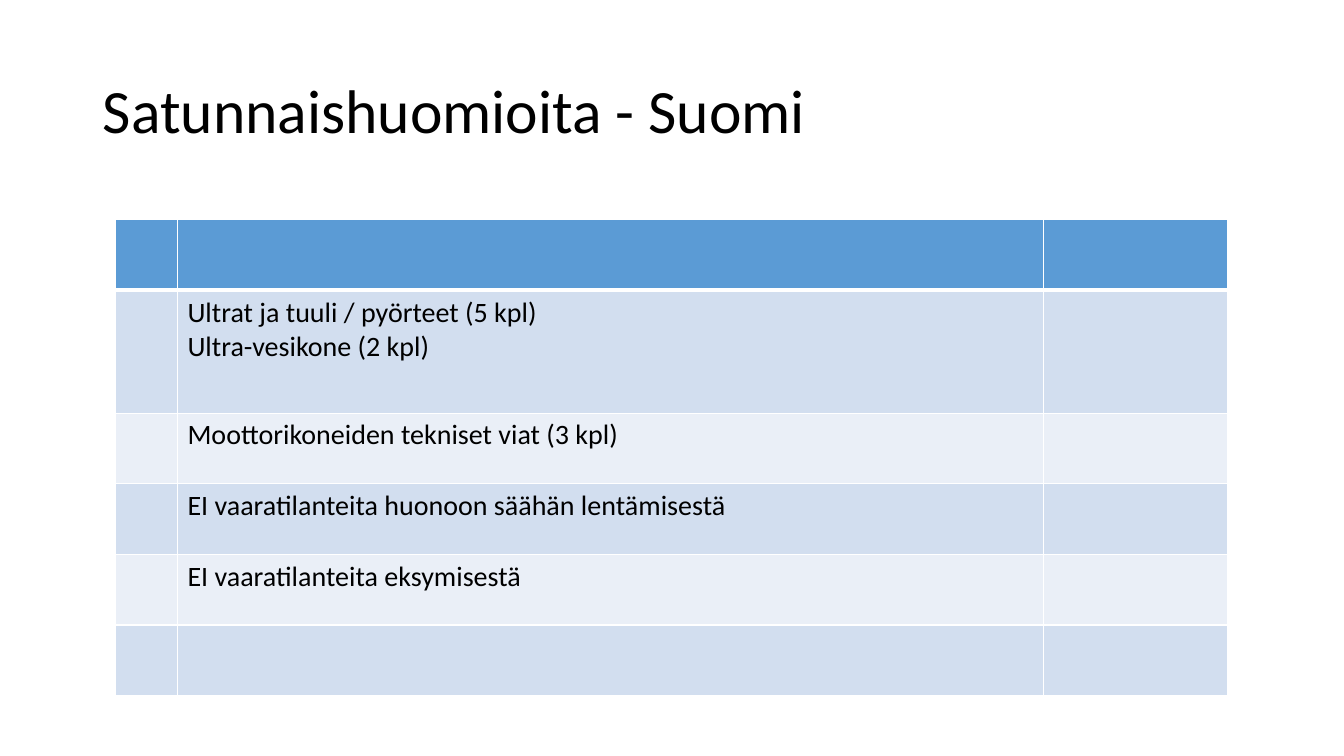
from pptx import Presentation
from pptx.dml.color import RGBColor
from pptx.enum.text import MSO_ANCHOR, MSO_AUTO_SIZE, PP_ALIGN
from pptx.oxml.ns import qn
from pptx.util import Inches, Pt
from lxml import etree

LEFT = PP_ALIGN.LEFT
MIDDLE = MSO_ANCHOR.MIDDLE
NO_FIT = MSO_AUTO_SIZE.NONE
TITLE_ONLY = 5

COLORS = {
    "text": "000000",
    "border": "FFFFFF",
    "header": "5B9BD5",
    "odd": "D2DEEF",
    "even": "EAEFF7",
}
COLUMN_WIDTHS = [0.62, 8.59, 1.83]
ROW_HEIGHTS = [0.7, 1.22, 0.7, 0.7, 0.7, 0.7]
OBSERVATIONS = [
    "",
    "Ultrat ja tuuli / pyörteet (5 kpl)\nUltra-vesikone (2 kpl)",
    "Moottorikoneiden tekniset viat (3 kpl)",
    "EI vaaratilanteita huonoon säähän lentämisestä",
    "EI vaaratilanteita eksymisestä",
    "",
]


class SlideBuilder:
    """Holds the text style and the current slide."""

    def __init__(self, slide, font="Calibri"):
        self.slide = slide
        self.font = font

    def style(self, frame, size):
        for paragraph in frame.paragraphs:
            paragraph.alignment = LEFT
            for run in paragraph.runs:
                run.font.name = self.font
                run.font.size = Pt(size)
                run.font.color.rgb = RGBColor.from_string(COLORS["text"])

    def title(self, text, left, top, width, height):
        heading = self.slide.shapes.title
        heading.left, heading.top = Inches(left), Inches(top)
        heading.width, heading.height = Inches(width), Inches(height)
        frame = heading.text_frame
        frame.text = text
        frame.word_wrap = True
        frame.auto_size = NO_FIT
        frame.vertical_anchor = MIDDLE
        frame.paragraphs[0].line_spacing = 0.9
        self.style(frame, 44)

    def border(self, cell, side, points):
        properties = cell._tc.get_or_add_tcPr()
        line = etree.SubElement(properties, qn(f"a:{side}"), w=str(Pt(points)))
        fill = etree.SubElement(line, qn("a:solidFill"))
        etree.SubElement(fill, qn("a:srgbClr"), val=COLORS["border"])

    def table(self, entries, left, top, widths, heights):
        table = self.slide.shapes.add_table(
            len(heights), len(widths), Inches(left), Inches(top),
            Inches(sum(widths)), Inches(sum(heights))).table
        for column, width in zip(table.columns, widths):
            column.width = Inches(width)
        for index, (row, height) in enumerate(zip(table.rows, heights)):
            row.height = Inches(height)
            band = "header" if index == 0 else "odd" if index % 2 else "even"
            thickness = {"lnL": 1, "lnR": 1,
                         "lnT": 3 if index == 1 else 1,
                         "lnB": 3 if index == 0 else 1}
            for cell in row.cells:
                for side, points in thickness.items():
                    self.border(cell, side, points)
                cell.fill.solid()
                cell.fill.fore_color.rgb = RGBColor.from_string(COLORS[band])
            if entries[index]:
                observation = row.cells[1].text_frame
                observation.text = entries[index]
                self.style(observation, 20)


def main():
    deck = Presentation()
    deck.slide_width, deck.slide_height = Inches(13.33), Inches(7.5)
    builder = SlideBuilder(deck.slides.add_slide(deck.slide_layouts[TITLE_ONLY]))
    builder.title("Satunnaishuomioita - Suomi", 0.92, 0.4, 11.5, 1.45)
    builder.table(OBSERVATIONS, 1.14, 2.18, COLUMN_WIDTHS, ROW_HEIGHTS)
    deck.save("out.pptx")


if __name__ == "__main__":
    main()
